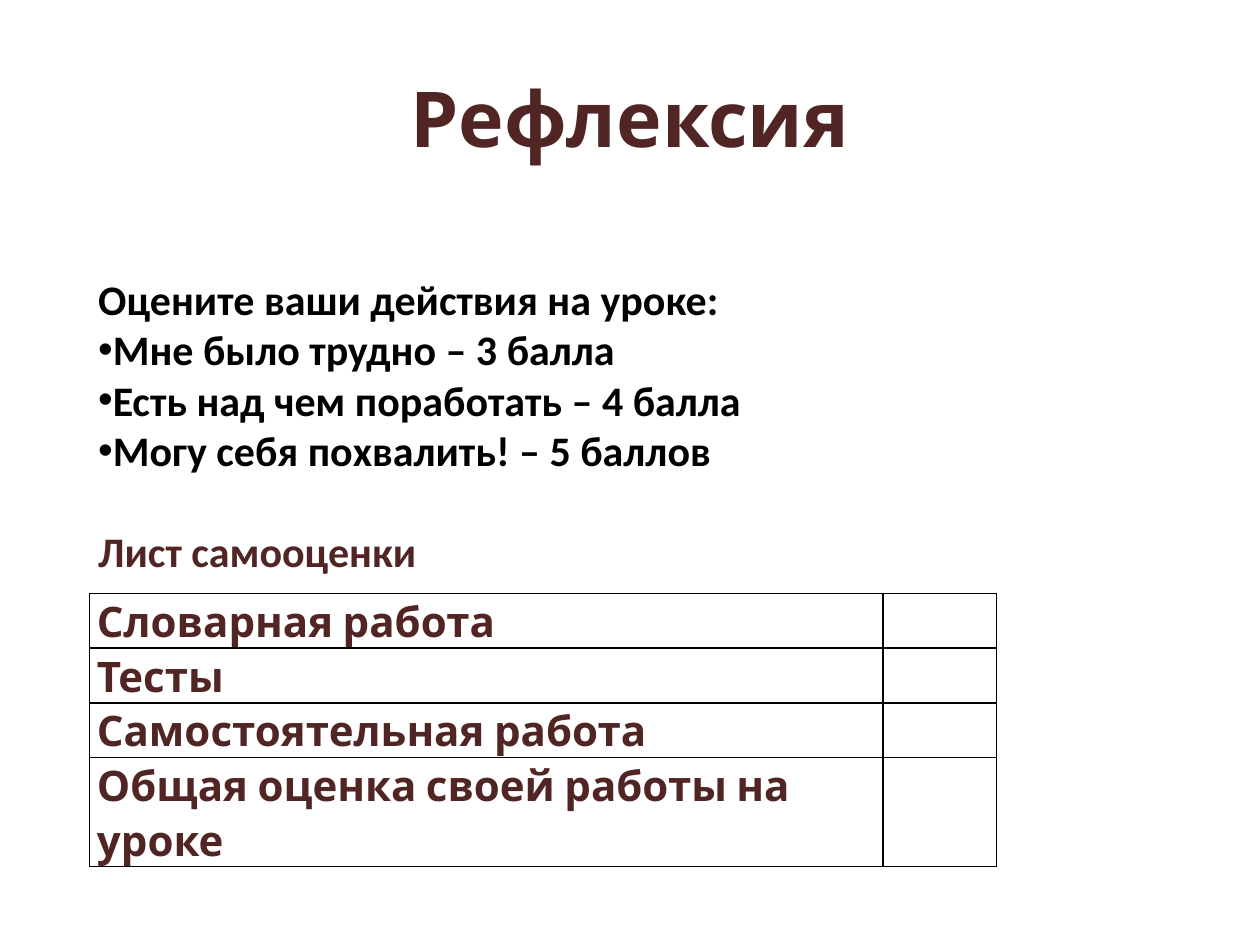
from dataclasses import dataclass

from lxml import etree
from pptx import Presentation
from pptx import util as u
from pptx.dml.color import RGBColor
from pptx.enum import text
from pptx.oxml.ns import qn

WIDTH, HEIGHT = 10, 7.5
LEFT = 0.071 * WIDTH
BROWN, BLACK, WHITE, PALE = "512524", "000000", "FFFFFF", "F2F2F2"
TITLE_FONT, BODY_FONT = "Cabin", "Calibri"
BODY_SIZE = 24


@dataclass
class Line:
    wording: str
    color: str = BLACK
    bullet: bool = False
    space_before: float = 0


LINES = [
    Line("Оцените ваши действия на уроке:"),
    Line("Мне было трудно – 3 балла", bullet=True),
    Line("Есть над чем поработать – 4 балла", bullet=True),
    Line("Могу себя похвалить! – 5 баллов", bullet=True),
    Line("Лист самооценки", BROWN, space_before=29),
]
CRITERIA = ["Словарная работа", "Тесты", "Самостоятельная работа",
            "Общая оценка своей работы на уроке"]
COLUMN_WIDTHS = [6.3, 0.9]
ROW_HEIGHT = 0.43


def rgb(color: str) -> RGBColor:
    return RGBColor.from_string(color)


def place(shape, left: float, top: float, width: float, height: float) -> None:
    shape.left, shape.top = u.Inches(left), u.Inches(top)
    shape.width, shape.height = u.Inches(width), u.Inches(height)


def format_runs(paragraph, font_name: str, size: float, color: str) -> None:
    for run in paragraph.runs:
        run.font.name = font_name
        run.font.size = u.Pt(size)
        run.font.bold = True
        run.font.color.rgb = rgb(color)


def add_solid_line(parent, tag: str, color: str, points: float, index: int) -> None:
    """Insert a solid line element, for a text outline or a cell border."""
    line = etree.Element(qn(tag), w=str(int(u.Pt(points))))
    fill = etree.SubElement(line, qn("a:solidFill"))
    etree.SubElement(fill, qn("a:srgbClr"), val=color)
    parent.insert(index, line)


def add_title(slide) -> None:
    title = slide.shapes.title
    place(title, 0.05 * WIDTH, 0.04 * HEIGHT, 0.9 * WIDTH, HEIGHT / 6)
    title.text_frame.text = "Рефлексия"
    title.text_frame.vertical_anchor = text.MSO_ANCHOR.MIDDLE
    paragraph = title.text_frame.paragraphs[0]
    paragraph.alignment = text.PP_ALIGN.CENTER
    format_runs(paragraph, TITLE_FONT, 44, BROWN)
    run_properties = paragraph.runs[0].font._element
    add_solid_line(run_properties, "a:ln", PALE, 0.15, 0)


def add_instructions(slide, lines: list[Line]) -> None:
    box = slide.shapes.add_textbox(0, 0, 0, 0)
    place(box, LEFT, 2.12, 6.03, HEIGHT / 3)
    frame = box.text_frame
    frame.word_wrap = True
    frame.auto_size = text.MSO_AUTO_SIZE.SHAPE_TO_FIT_TEXT
    frame.vertical_anchor = text.MSO_ANCHOR.MIDDLE
    frame.margin_left = frame.margin_right = u.Inches(0.07)
    frame.margin_top = frame.margin_bottom = u.Inches(0.04)
    frame.text = "\n".join(line.wording for line in lines)
    for paragraph, line in zip(frame.paragraphs, lines):
        if line.space_before:
            paragraph.space_before = u.Pt(line.space_before)
        if line.bullet:
            properties = paragraph._p.get_or_add_pPr()
            etree.SubElement(properties, qn("a:buFont"), typeface="Arial")
            etree.SubElement(properties, qn("a:buChar"), char="•")
        format_runs(paragraph, BODY_FONT, BODY_SIZE, line.color)


def format_cell(cell) -> None:
    cell.margin_left = cell.margin_right = u.Inches(0.06)
    cell.margin_top = cell.margin_bottom = 0
    cell.fill.solid()
    cell.fill.fore_color.rgb = rgb(WHITE)
    properties = cell._tc.get_or_add_tcPr()
    for index, side in enumerate(("a:lnL", "a:lnR", "a:lnT", "a:lnB")):
        add_solid_line(properties, side, BLACK, 1, index)
    paragraph = cell.text_frame.paragraphs[0]
    paragraph.line_spacing = 1.07
    format_runs(paragraph, TITLE_FONT, BODY_SIZE, BROWN)


def add_score_table(slide, criteria: list[str]) -> None:
    frame = slide.shapes.add_table(
        len(criteria), len(COLUMN_WIDTHS), u.Inches(LEFT), u.Inches(4.71),
        u.Inches(sum(COLUMN_WIDTHS)), u.Inches(ROW_HEIGHT * len(criteria)))
    table = frame.table
    table.first_row = table.horz_banding = False
    for column, width in zip(table.columns, COLUMN_WIDTHS):
        column.width = u.Inches(width)
    for row, criterion in zip(table.rows, criteria):
        row.height = u.Inches(ROW_HEIGHT)
        row.cells[0].text_frame.text = criterion
        for cell in row.cells:
            format_cell(cell)


def main() -> None:
    presentation = Presentation()
    presentation.slide_width = u.Inches(WIDTH)
    presentation.slide_height = u.Inches(HEIGHT)
    slide = presentation.slides.add_slide(presentation.slide_layouts[5])
    slide.background.fill.solid()
    slide.background.fill.fore_color.rgb = rgb(WHITE)
    add_title(slide)
    add_score_table(slide, CRITERIA)
    add_instructions(slide, LINES)
    presentation.save("out.pptx")


if __name__ == "__main__":
    main()
